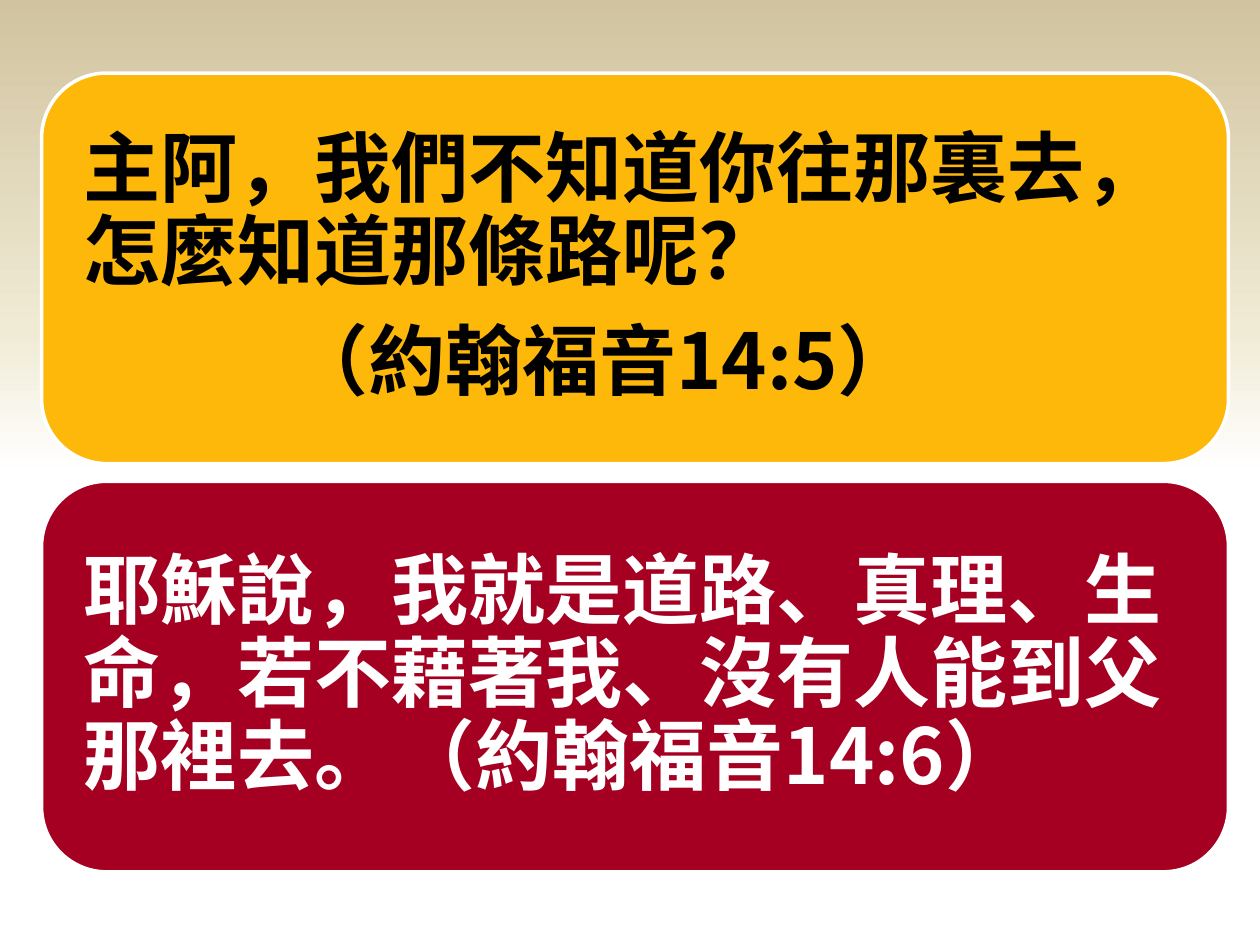
from lxml.etree import SubElement
from pptx import Presentation
from pptx.dml.color import RGBColor
from pptx.enum.shapes import MSO_SHAPE
from pptx.enum.text import MSO_ANCHOR, PP_ALIGN
from pptx.oxml.ns import qn
from pptx.util import Inches, Pt

COLORS = {
    "white": "FFFFFF",
    "black": "000000",
    "cream": "F0EBD5",
    "tan": "D1C39F",
    "gold": "FEB80A",
    "crimson": "A50021",
}
FONT = "Noto Sans CJK SC"
CARD_LEFT, CARD_TOP, CARD_WIDTH, CARD_HEIGHT = 0.33, 0.58, 9.42, 3.1
CARD_PITCH = 3.24


def color(name):
    """Return the named palette colour."""
    return RGBColor.from_string(COLORS[name])


def set_background(slide, stops):
    """Fill the background with a vertical gradient rising from the bottom."""
    fill = slide.background.fill
    fill.gradient()
    fill.gradient_angle = 90
    stop_list = slide.element.find(".//" + qn("a:gsLst"))
    stop_list.clear()
    for percent, name in stops:
        stop = SubElement(stop_list, qn("a:gs"), pos=str(percent * 1000))
        SubElement(stop, qn("a:srgbClr"), val=COLORS[name])


def format_paragraph(paragraph, text_color, indent):
    """Apply the verse style and left indent to a paragraph."""
    paragraph.alignment = PP_ALIGN.LEFT
    paragraph.line_spacing = 0.9
    paragraph.space_after = Pt(15.4)
    properties = paragraph._p.get_or_add_pPr()
    properties.set("marL", str(Inches(indent)))
    properties.set("indent", "0")
    tabs = SubElement(properties, qn("a:tabLst"))
    SubElement(tabs, qn("a:tab"), pos=str(Inches(3)), algn="l")
    for run in paragraph.runs:
        run.font.size = Pt(44)
        run.font.bold = True
        run.font.name = FONT
        run.font.color.rgb = color(text_color)
        SubElement(run._r.get_or_add_rPr(), qn("a:ea"), typeface=FONT)


def add_verse_card(slide, index, fill_color, text_color, lines):
    """Add a rounded card holding (text, indent) paragraphs."""
    card = slide.shapes.add_shape(
        MSO_SHAPE.ROUNDED_RECTANGLE,
        Inches(CARD_LEFT), Inches(CARD_TOP + index * CARD_PITCH),
        Inches(CARD_WIDTH), Inches(CARD_HEIGHT),
    )
    card.shadow.inherit = False
    card.fill.solid()
    card.fill.fore_color.rgb = color(fill_color)
    card.line.color.rgb = color("white")
    card.line.width = Pt(2)
    frame = card.text_frame
    frame.word_wrap = True
    frame.vertical_anchor = MSO_ANCHOR.MIDDLE
    frame.margin_left = frame.margin_right = Inches(0.18)
    frame.margin_top = frame.margin_bottom = Inches(0.18)
    frame.text = "\n".join(text for text, indent in lines)
    for paragraph, (text, indent) in zip(frame.paragraphs, lines):
        format_paragraph(paragraph, text_color, indent)


def main():
    """Build the slide with its two verse cards."""
    presentation = Presentation()
    presentation.slide_width = Inches(10)
    presentation.slide_height = Inches(7.5)
    slide = presentation.slides.add_slide(presentation.slide_layouts[6])
    set_background(slide, [(50, "white"), (65, "cream"), (100, "tan")])
    add_verse_card(slide, 0, "gold", "black", [
        ("主阿，我們不知道你往那裏去，怎麼知道那條路呢？", 0),
        ("（約翰福音14:5）", 1.65),
    ])
    add_verse_card(slide, 1, "crimson", "white", [
        ("耶穌說，我就是道路、真理、生命，若不藉著我、沒有人能到父那裡去。\t（約翰福音14:6）", 0),
    ])
    presentation.save("out.pptx")


if __name__ == "__main__":
    main()
